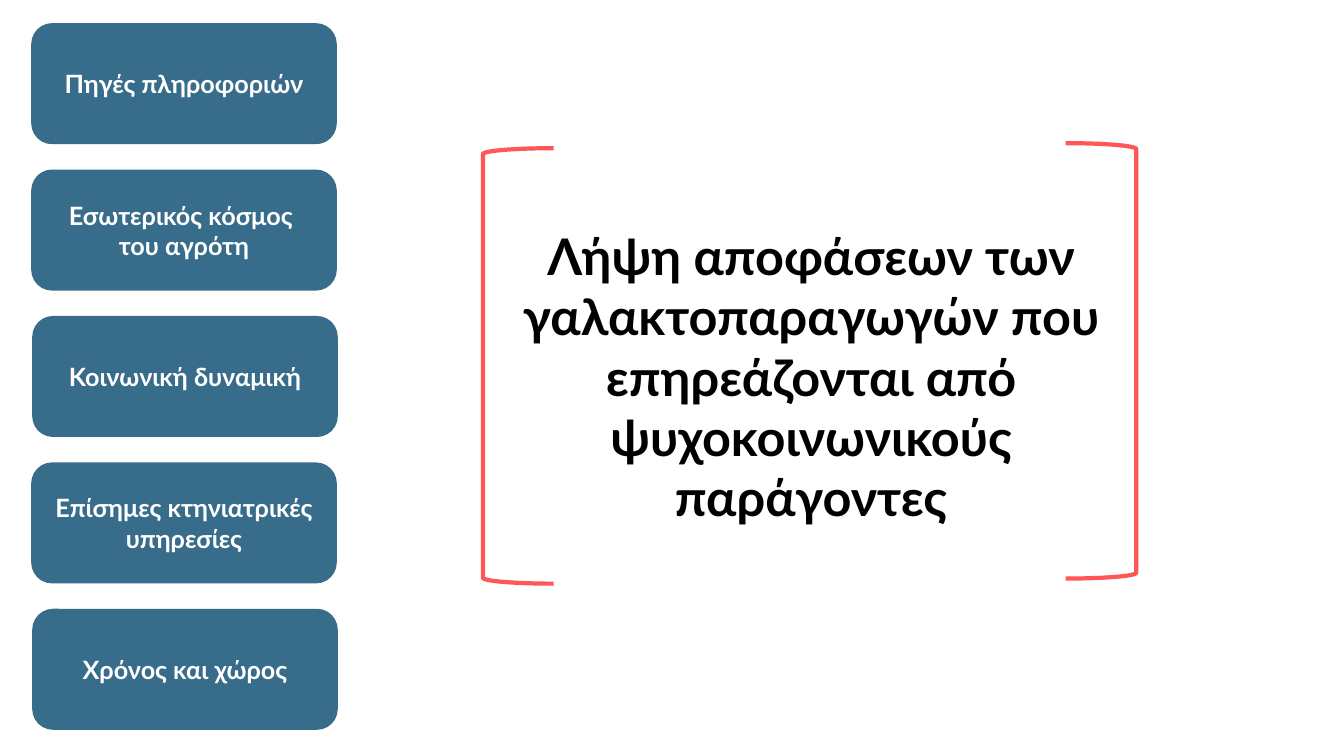
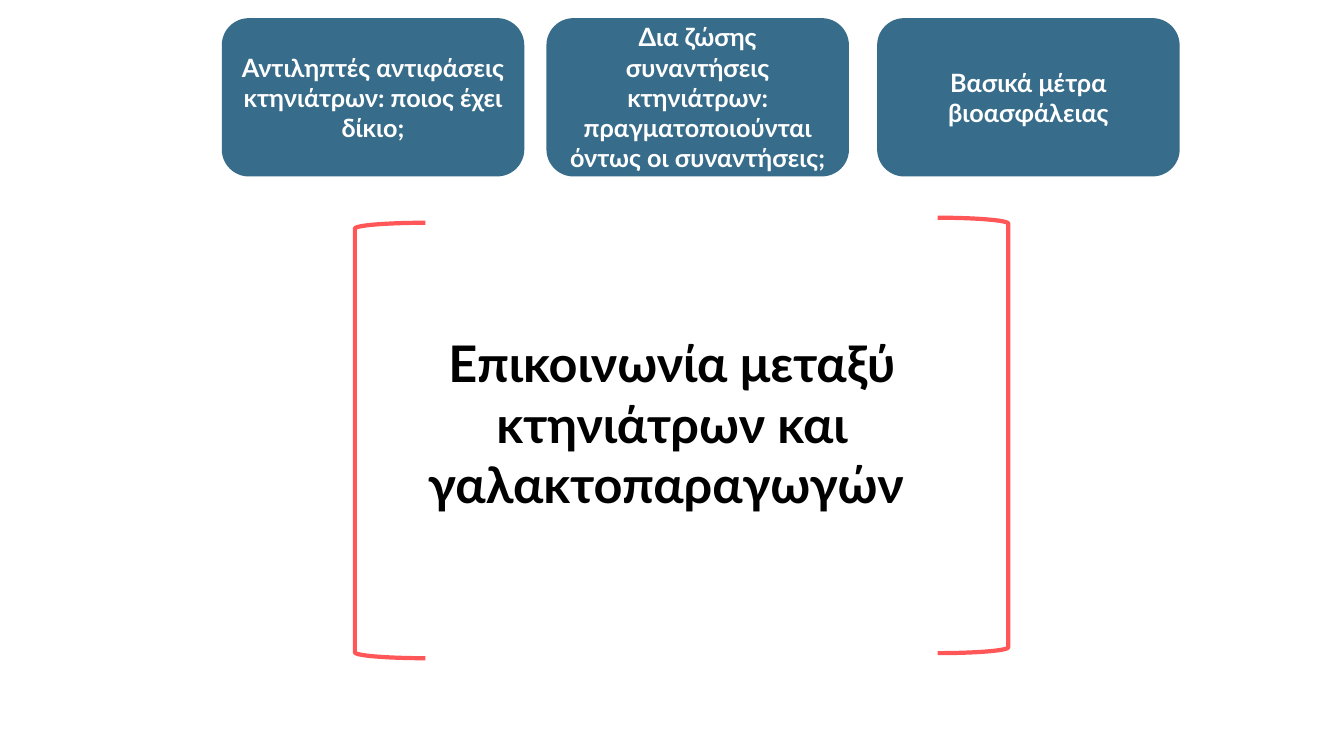
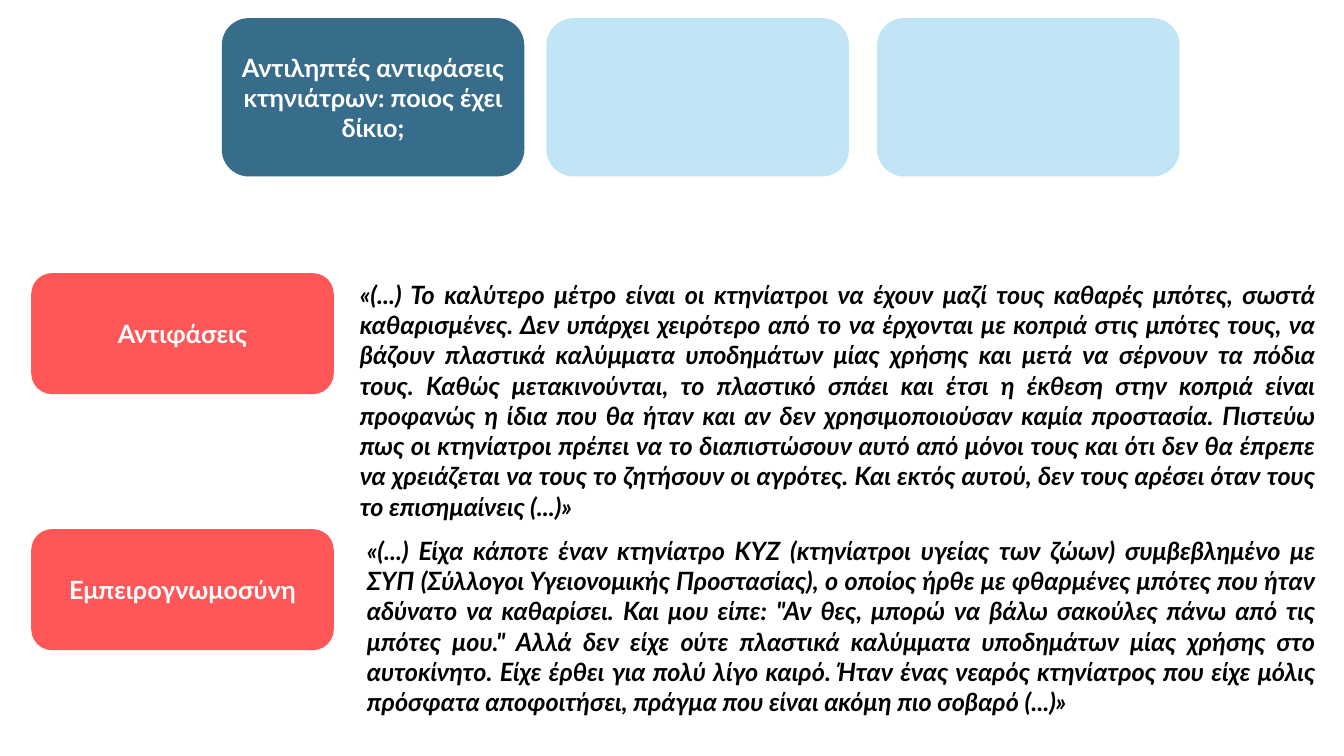
from dataclasses import dataclass

from pptx import Presentation
from pptx import util as u
from pptx.dml import color
from pptx.enum import shapes, text
from pptx.slide import Slide

COLORS = {
    "blue": "376C8A",
    "pale": "C1E5F5",
    "coral": "FF5657",
    "white": "FFFFFF",
    "black": "000000",
}
FONT = "Lato"
MARGIN = 0.32
FACTOR_TOP, LAST_FACTOR_TOP = 0.24, 6.05
FACTOR_WIDTH, CARD_HEIGHT = 3.01, 1.18
TOPIC_LEFTS = (2.21, 5.43, 8.71)
TOPIC_TOP, TOPIC_WIDTH, TOPIC_HEIGHT = 0.19, 2.98, 1.55
BRACKET_WIDTH, BRACKET_HEIGHT = 0.7, 4.32
BRACKET_SPREAD, BRACKET_RISE = 5.78, 0.05


@dataclass(frozen=True)
class Factor:
    words: str
    left: float = MARGIN


FACTORS = (
    Factor("Πηγές πληροφοριών"),
    Factor("Εσωτερικός κόσμος \vτου αγρότη"),
    Factor("Κοινωνική δυναμική", 0.33),
    Factor("Επίσημες κτηνιατρικές υπηρεσίες"),
    Factor("Χρόνος και χώρος", 0.33),
)
TOPICS = (
    "Αντιληπτές αντιφάσεις κτηνιάτρων: ποιος έχει δίκιο;",
    "Δια ζώσης συναντήσεις κτηνιάτρων: πραγματοποιούνται όντως οι συναντήσεις;",
    "Βασικά μέτρα βιοασφάλειας",
)


@dataclass(frozen=True)
class Box:
    left: float
    top: float
    width: float
    height: float

    def lengths(self) -> tuple[u.Length, ...]:
        return tuple(
            u.Inches(side) for side in (self.left, self.top, self.width, self.height)
        )


@dataclass(frozen=True)
class Quote:
    label: str
    words: str
    box: Box


QUOTES = (
    Quote(
        "Αντιφάσεις",
        "«(...) Το καλύτερο μέτρο είναι οι κτηνίατροι να έχουν μαζί τους καθαρές "
        "μπότες, σωστά καθαρισμένες. Δεν υπάρχει χειρότερο από το να έρχονται με "
        "κοπριά στις μπότες τους, να βάζουν πλαστικά καλύμματα υποδημάτων μίας "
        "χρήσης και μετά να σέρνουν τα πόδια τους. Καθώς μετακινούνται, το πλαστικό "
        "σπάει και έτσι η έκθεση στην κοπριά είναι προφανώς η ίδια που θα ήταν και "
        "αν δεν χρησιμοποιούσαν καμία προστασία. Πιστεύω πως οι κτηνίατροι πρέπει "
        "να το διαπιστώσουν αυτό από μόνοι τους και ότι δεν θα έπρεπε να χρειάζεται "
        "να τους το ζητήσουν οι αγρότες. Και εκτός αυτού, δεν τους αρέσει όταν τους "
        "το επισημαίνεις (...)»",
        Box(3.47, 2.72, 9.68, 1.92),
    ),
    Quote(
        "Εμπειρογνωμοσύνη",
        "«(...) Είχα κάποτε έναν κτηνίατρο KYZ (κτηνίατροι υγείας των ζώων) "
        "συμβεβλημένο με ΣΥΠ (Σύλλογοι Υγειονομικής Προστασίας), ο οποίος ήρθε με "
        "φθαρμένες μπότες που ήταν αδύνατο να καθαρίσει. Και μου είπε: \"Αν θες, "
        "μπορώ να βάλω σακούλες πάνω από τις μπότες μου.\" Αλλά δεν είχε ούτε "
        "πλαστικά καλύμματα υποδημάτων μίας χρήσης στο αυτοκίνητο. Είχε έρθει για "
        "πολύ λίγο καιρό. Ήταν ένας νεαρός κτηνίατρος που είχε μόλις πρόσφατα "
        "αποφοιτήσει, πράγμα που είναι ακόμη πιο σοβαρό (...)»",
        Box(3.54, 5.26, 9.61, 1.62),
    ),
)


def rgb(name: str) -> color.RGBColor:
    return color.RGBColor.from_string(COLORS[name])


def write(
    frame,
    words: str,
    size: int,
    ink: str,
    align: text.PP_ALIGN = text.PP_ALIGN.CENTER,
    italic: bool = False,
) -> None:
    frame.word_wrap = True
    paragraph = frame.paragraphs[0]
    paragraph.text = words
    paragraph.alignment = align
    font = paragraph.font
    font.name, font.size = FONT, u.Pt(size)
    font.bold, font.italic = True, italic
    font.color.rgb = rgb(ink)


def add_card(slide: Slide, box: Box, words: str = "", fill: str = "blue") -> None:
    card = slide.shapes.add_shape(
        shapes.MSO_SHAPE.ROUNDED_RECTANGLE, *box.lengths()
    )
    card.shadow.inherit = False
    card.fill.solid()
    card.fill.fore_color.rgb = rgb(fill)
    card.line.color.rgb = rgb(fill)
    card.line.width = u.Pt(1.5)
    if words:
        card.text_frame.vertical_anchor = text.MSO_ANCHOR.MIDDLE
        write(card.text_frame, words, 18, "white")


def add_text(
    slide: Slide,
    box: Box,
    words: str,
    size: int,
    align: text.PP_ALIGN = text.PP_ALIGN.CENTER,
    italic: bool = False,
) -> None:
    frame = slide.shapes.add_textbox(*box.lengths()).text_frame
    write(frame, words, size, "black", align, italic)
    frame.auto_size = text.MSO_AUTO_SIZE.SHAPE_TO_FIT_TEXT


def add_brackets(slide: Slide, left: float, top: float) -> None:
    sides = (
        (shapes.MSO_SHAPE.LEFT_BRACKET, left, top),
        (shapes.MSO_SHAPE.RIGHT_BRACKET, left + BRACKET_SPREAD, top - BRACKET_RISE),
    )
    for preset, x, y in sides:
        box = Box(x, y, BRACKET_WIDTH, BRACKET_HEIGHT)
        bracket = slide.shapes.add_shape(preset, *box.lengths())
        bracket.shadow.inherit = False
        bracket.fill.background()
        bracket.line.color.rgb = rgb("coral")
        bracket.line.width = u.Pt(3)


def add_topics(slide: Slide, active: tuple[str, ...]) -> None:
    for left, topic in zip(TOPIC_LEFTS, TOPICS):
        box = Box(left, TOPIC_TOP, TOPIC_WIDTH, TOPIC_HEIGHT)
        if topic in active:
            add_card(slide, box, topic)
        else:
            add_card(slide, box, fill="pale")


def build_decisions(slide: Slide) -> None:
    pitch = (LAST_FACTOR_TOP - FACTOR_TOP) / (len(FACTORS) - 1)
    for row, factor in enumerate(FACTORS):
        top = FACTOR_TOP + row * pitch
        add_card(slide, Box(factor.left, top, FACTOR_WIDTH, CARD_HEIGHT), factor.words)
    add_text(
        slide,
        Box(4.89, 2.18, 6.31, 3.13),
        "Λήψη αποφάσεων των γαλακτοπαραγωγών που επηρεάζονται από "
        "ψυχοκοινωνικούς παράγοντες",
        36,
    )
    add_brackets(slide, 4.79, 1.47)


def build_communication(slide: Slide) -> None:
    add_topics(slide, TOPICS)
    add_text(
        slide,
        Box(3.33, 3.25, 6.67, 1.92),
        "Επικοινωνία μεταξύ κτηνιάτρων και γαλακτοπαραγωγών ",
        36,
    )
    add_brackets(slide, 3.52, 2.21)


def build_contradictions(slide: Slide) -> None:
    for quote in QUOTES:
        label_box = Box(MARGIN, quote.box.top, TOPIC_WIDTH, CARD_HEIGHT)
        add_card(slide, label_box, quote.label, "coral")
        add_text(slide, quote.box, quote.words, 18, text.PP_ALIGN.JUSTIFY, True)
    add_topics(slide, TOPICS[:1])


def main() -> None:
    deck = Presentation()
    deck.slide_width, deck.slide_height = u.Inches(13.33), u.Inches(7.5)
    blank = deck.slide_layouts[6]
    for build in (build_decisions, build_communication, build_contradictions):
        build(deck.slides.add_slide(blank))
    deck.save("out.pptx")


if __name__ == "__main__":
    main()
